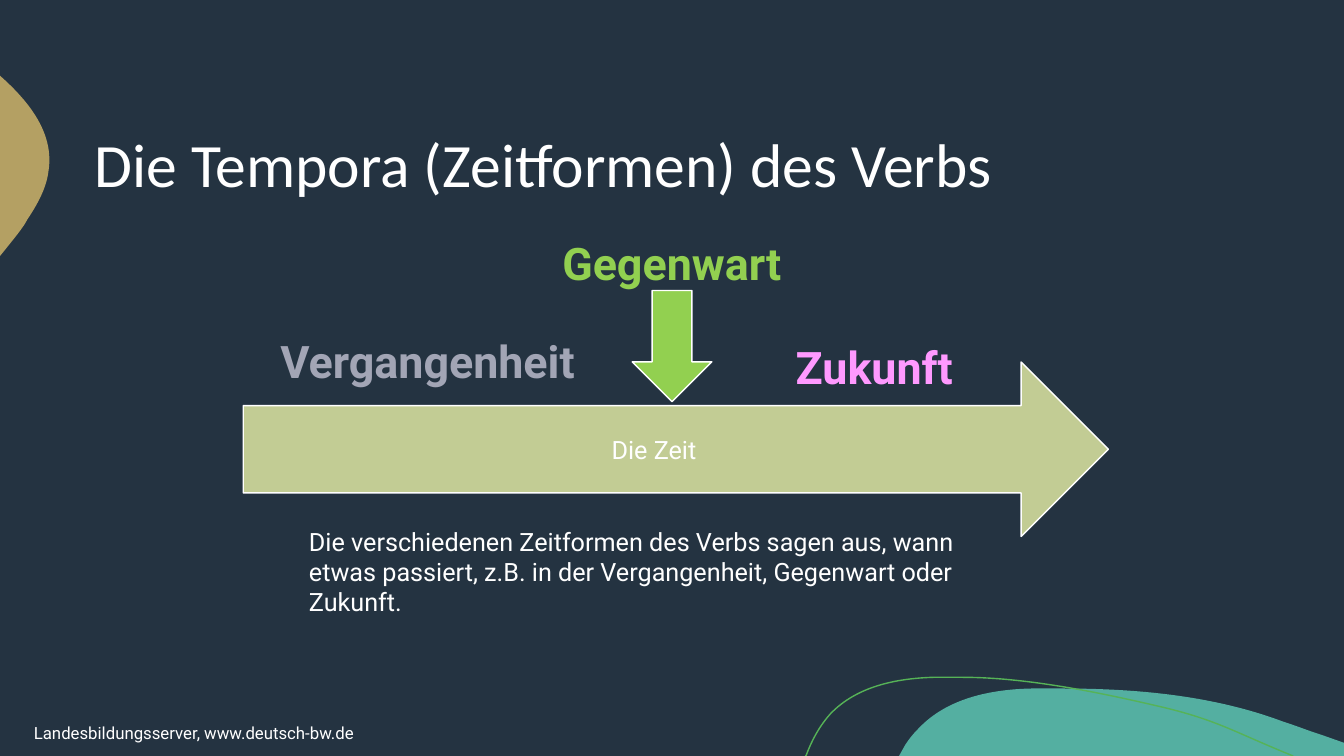
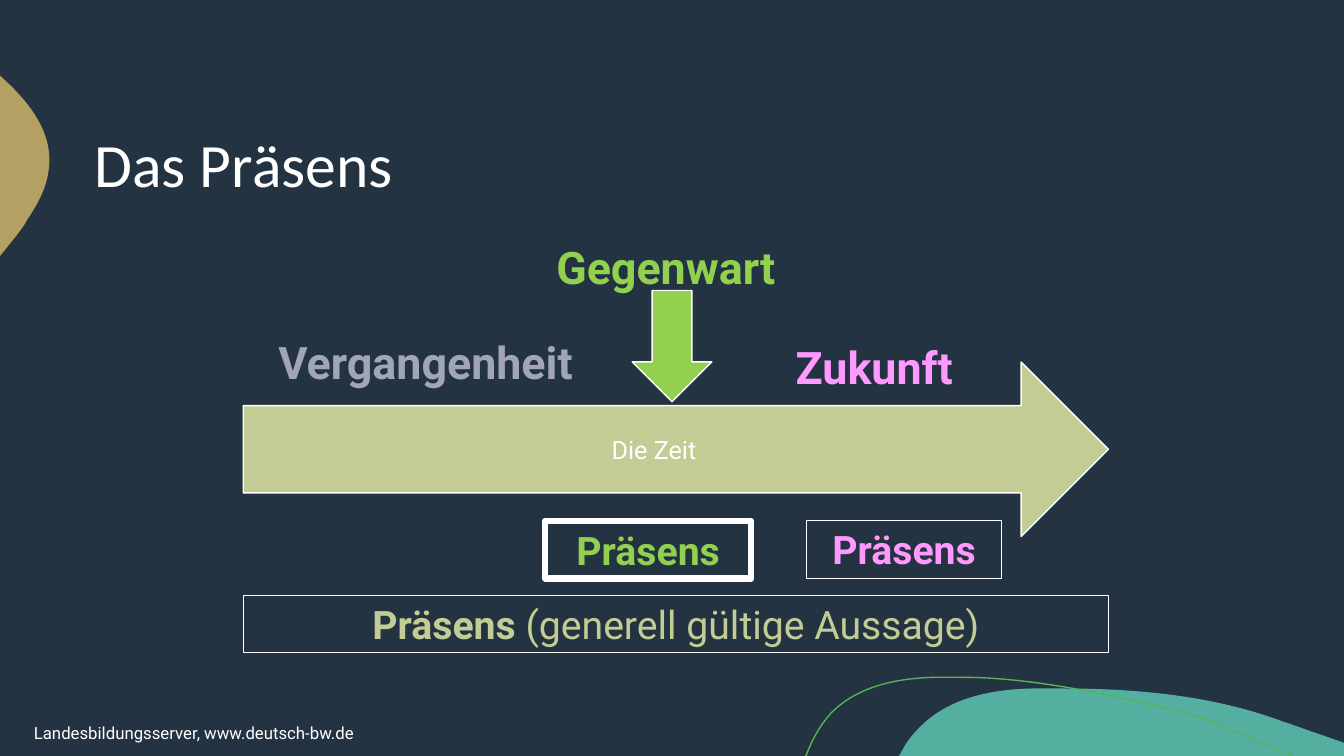
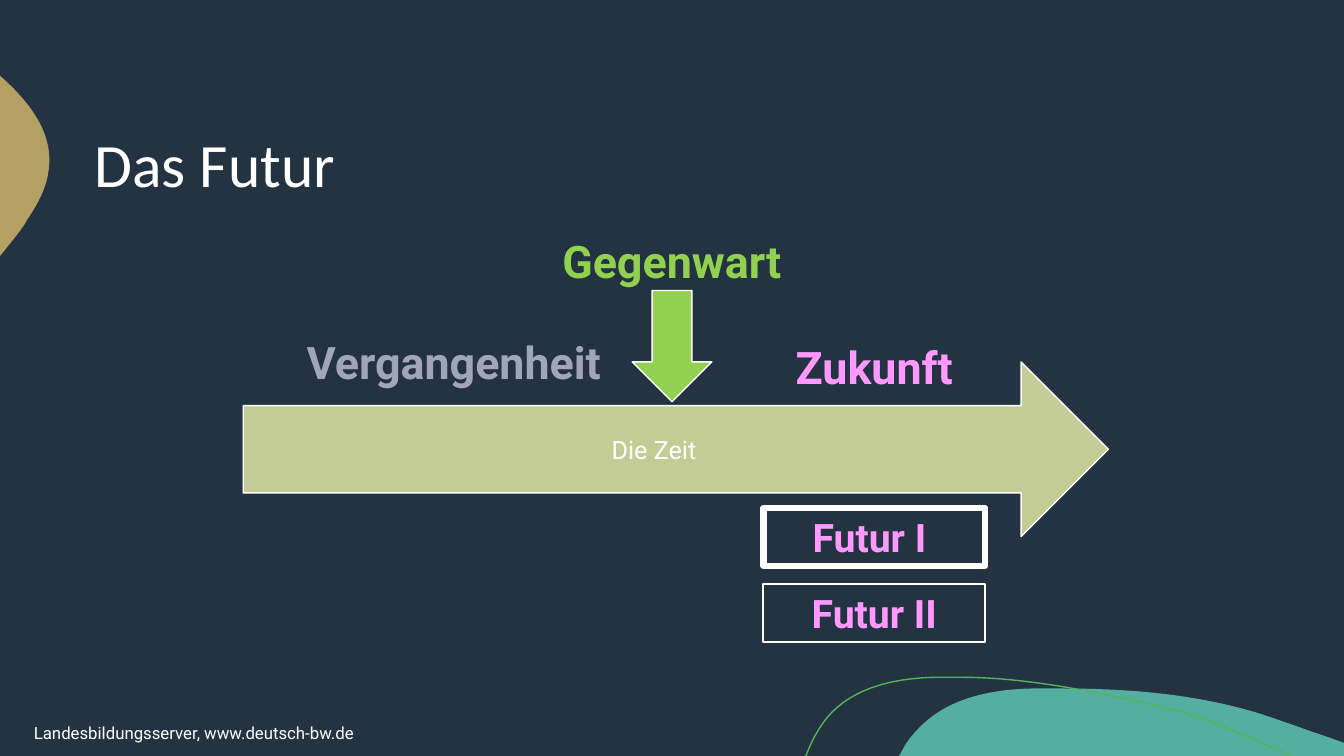
from dataclasses import dataclass

from lxml.etree import SubElement
from pptx import Presentation
from pptx.dml.color import RGBColor
from pptx.enum.shapes import MSO_SHAPE
from pptx.enum.text import MSO_ANCHOR, MSO_AUTO_SIZE, PP_ALIGN
from pptx.oxml.ns import qn
from pptx.util import Pt


@dataclass(frozen=True)
class Theme:
    background: str = "243341"
    white: str = "FFFFFF"
    teal: str = "54AFA1"
    gold: str = "B4A063"
    leaf: str = "56B357"
    time: str = "C2CC94"
    past: str = "A2A5B5"
    present: str = "92D050"
    future: str = "FF99FF"
    title_font: str = "Calibri"
    body_font: str = "Roboto"
    title_size: float = 44
    era_size: float = 32
    tense_size: float = 28
    body_size: float = 18
    footer_size: float = 12
    thin: float = 0.75
    outline: float = 1
    medium: float = 1.5
    thick: float = 4.5


THEME = Theme()

SLIDE_SIZE = (960, 540)
TITLE_BOX = (60.5, 60, 840, 120)
TIME_ARROW = (173.8, 258.6, 617.9, 124.6)
NOW_ARROW = (451.6, 207.5, 56.9, 79.4)
BODY_BOX = (213.6, 372.2, 493.2, 72.7)
FOOTER_BOX = (0, 509, 277.2, 28.8)
ERA_HEIGHT = 46
FRAME_HEIGHT = 41.2
FOOTER = "Landesbildungsserver, www.deutsch-bw.de"

# Outlines: start point, then lines (x, y) or Bézier curves (two controls and an end).
WAVE = [
    (758.9, 491.8),
    (812.2, 491.8, 866.9, 496.8, 916.6, 515.5),
    (925.9, 518.4, 934.6, 522, 943.9, 524.9),
    (960, 530.6), (960, 540), (642.2, 540), (646.6, 532.1),
    (649.4, 527.8, 652.3, 524.2, 655.9, 520.6),
    (676.1, 499, 707, 492.5, 736.6, 491.8),
    (743.8, 491.8, 751, 491.8, 758.9, 491.8),
]
BUMP = [
    (0, 54), (0.7, 54.7),
    (21.6, 73.4, 38.9, 95.8, 34.6, 122.4),
    (33.1, 134.6, 26.6, 146.2, 19.4, 157),
    (17.3, 161.3, 12.2, 167.8, 5.8, 175.7),
    (0, 182.9),
]
STEM = [
    (575.3, 540), (576, 539.3),
    (580.3, 527.8, 586.1, 517.7, 593.3, 509.8),
    (612, 490.3, 640.1, 484.6, 666.7, 483.8),
    (687.6, 483.8),
    (735.8, 483.8, 792, 496.1, 831.6, 505.4),
    (870.5, 514.8, 882.7, 523.4, 923.8, 540),
]

ERAS = [
    ("Gegenwart", THEME.present),
    ("Vergangenheit", THEME.past),
    ("Zukunft", THEME.future),
]
FUTURE_PLACE = (519.8, 239, 209.5)

# "eras" holds left, top, width in the order of ERAS.
# "frames" holds left, top, width, line width, colour, bold text, plain text.
SLIDES = [
    {
        "title": "Die Tempora (Zeitformen) des Verbs",
        "eras": [(381.4, 164.9, 197.3), (173.8, 234.7, 263.5), FUTURE_PLACE],
        "body": "Die verschiedenen Zeitformen des Verbs sagen aus, wann etwas "
                "passiert, z.B. in der Vergangenheit, Gegenwart oder Zukunft.",
        "frames": [],
    },
    {
        "title": "Das Präsens",
        "eras": [(379.2, 167.8, 193), (173.8, 235.4, 260.6), FUTURE_PLACE],
        "frames": [
            (389.3, 372.1, 147.4, THEME.thick, THEME.present, "Präsens", ""),
            (576.3, 372, 139, THEME.thin, THEME.future, "Präsens", ""),
            (173.8, 425.2, 617.9, THEME.thin, THEME.time,
             "Präsens ", "(generell gültige Aussage)"),
        ],
    },
    {
        "title": "Das Futur",
        "eras": [(382.1, 163.4, 195.8), (196.8, 235.4, 254.9), FUTURE_PLACE],
        "frames": [
            (545.3, 417.3, 158.4, THEME.medium, THEME.future, " Futur II ", ""),
            (545.3, 362.9, 158.4, THEME.thick, THEME.future, "Futur I ", ""),
        ],
    },
]


def paint(shape, fill=None, line=None, width=THEME.outline):
    shape.shadow.inherit = False
    if fill:
        shape.fill.solid()
        shape.fill.fore_color.rgb = RGBColor.from_string(fill)
    else:
        shape.fill.background()
    if line:
        shape.line.color.rgb = RGBColor.from_string(line)
        shape.line.width = Pt(width)
    else:
        shape.line.fill.background()


def write(shape, spans, size, color=THEME.white, font=THEME.body_font,
          align=PP_ALIGN.CENTER, spacing=None, **frame_format):
    """Fill the shape with one paragraph; spans are (text, bold) pairs."""
    frame = shape.text_frame
    for name, value in {"word_wrap": True, **frame_format}.items():
        setattr(frame, name, value)
    para = frame.paragraphs[0]
    para.alignment = align
    if spacing:
        para.line_spacing = spacing
    for text, bold in spans:
        span = para.add_run()
        span.text = text
        for name, value in {"name": font, "size": Pt(size), "bold": bold}.items():
            setattr(span.font, name, value)
        span.font.color.rgb = RGBColor.from_string(color)


def add_box(page, place):
    return page.shapes.add_textbox(*map(Pt, place))


def add_preset(page, kind, place, **style):
    shape = page.shapes.add_shape(kind, *map(Pt, place))
    paint(shape, **style)
    return shape


def add_outline(page, outline, closed=True, **style):
    """Draw a freeform through the end points, then bend its curved segments."""
    start, *ends = [(Pt(segment[-2]), Pt(segment[-1])) for segment in outline]
    builder = page.shapes.build_freeform(*start)
    builder.add_line_segments(ends, close=closed)
    shape = builder.convert_to_shape()
    lines = list(shape.element.iter(qn("a:lnTo")))
    for line, segment in zip(lines, outline[1:]):
        if len(segment) == 2:
            continue
        line.clear()
        line.tag = qn("a:cubicBezTo")
        for x, y in zip(segment[::2], segment[1::2]):
            SubElement(line, qn("a:pt"),
                       x=str(Pt(x) - shape.left), y=str(Pt(y) - shape.top))
    paint(shape, **style)


def add_page(deck, content):
    page = deck.slides.add_slide(deck.slide_layouts[6])
    add_outline(page, WAVE, fill=THEME.teal)
    add_outline(page, BUMP, fill=THEME.gold)
    add_outline(page, STEM, closed=False, line=THEME.leaf)

    write(add_box(page, TITLE_BOX), [(content["title"], False)], THEME.title_size,
          font=THEME.title_font, align=PP_ALIGN.LEFT, spacing=0.9,
          vertical_anchor=MSO_ANCHOR.MIDDLE)

    time_arrow = add_preset(page, MSO_SHAPE.RIGHT_ARROW, TIME_ARROW,
                            fill=THEME.time, line=THEME.white)
    write(time_arrow, [("Die Zeit", False)], THEME.body_size,
          vertical_anchor=MSO_ANCHOR.MIDDLE)
    add_preset(page, MSO_SHAPE.DOWN_ARROW, NOW_ARROW,
               fill=THEME.present, line=THEME.white)

    growing = {"auto_size": MSO_AUTO_SIZE.SHAPE_TO_FIT_TEXT,
               "vertical_anchor": MSO_ANCHOR.TOP}
    for (era, color), place in zip(ERAS, content["eras"]):
        write(add_box(page, (*place, ERA_HEIGHT)), [(era, True)],
              THEME.era_size, color, **growing)
    if "body" in content:
        write(add_box(page, BODY_BOX), [(content["body"], False)],
              THEME.body_size, align=PP_ALIGN.LEFT, **growing)
    for left, top, width, line_width, color, strong, plain in content["frames"]:
        tense = add_preset(page, MSO_SHAPE.RECTANGLE, (left, top, width, FRAME_HEIGHT),
                           line=THEME.white, width=line_width)
        spans = [(text, bold) for text, bold in ((strong, True), (plain, False)) if text]
        write(tense, spans, THEME.tense_size, color, **growing)

    write(add_box(page, FOOTER_BOX), [(FOOTER, False)], THEME.footer_size,
          vertical_anchor=MSO_ANCHOR.MIDDLE)


def main():
    deck = Presentation()
    deck.slide_width, deck.slide_height = map(Pt, SLIDE_SIZE)
    backdrop = deck.slide_master.background.fill
    backdrop.solid()
    backdrop.fore_color.rgb = RGBColor.from_string(THEME.background)
    for content in SLIDES:
        add_page(deck, content)
    deck.save("out.pptx")


if __name__ == "__main__":
    main()
